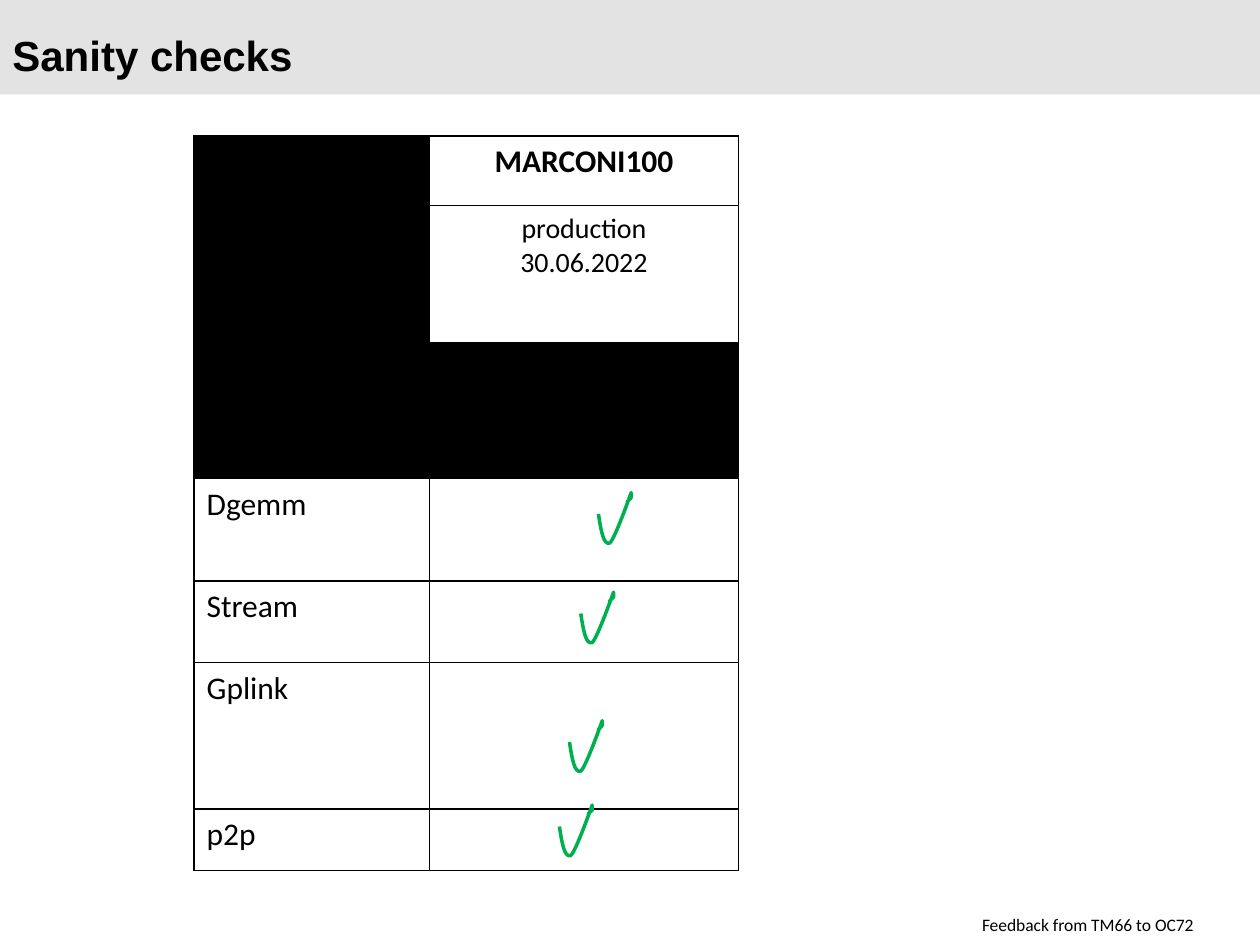
from lxml.etree import SubElement
from pptx import Presentation
from pptx.dml.color import RGBColor
from pptx.enum.shapes import MSO_SHAPE
from pptx.enum.text import MSO_ANCHOR, PP_ALIGN
from pptx.oxml import parse_xml
from pptx.oxml.ns import nsdecls, qn
from pptx.util import Inches, Pt

BLACK = RGBColor(0x00, 0x00, 0x00)
BAND_GRAY = RGBColor(0xE3, 0xE3, 0xE3)
CHECK_GREEN = RGBColor(0x00, 0xB0, 0x50)

COLUMN_WIDTHS = [1.87, 2.45]
ROW_HEIGHTS = [0.55, 1.09, 1.08, 0.81, 0.65, 1.16, 0.49]
ROWS = [
    ("", "MARCONI100"),
    ("", "production\n30.06.2022"),
    ("", ""),
    ("Dgemm", ""),
    ("Stream", ""),
    ("Gplink", ""),
    ("p2p", ""),
]
BLACK_CELLS = {(0, 0), (1, 0), (2, 0), (2, 1)}

# Check mark: start point, then cubic curves, relative to its box
CHECK_START = (0, 0.17)
CHECK_CURVES = [
    ((0.02, 0.3), (0.04, 0.42), (0.09, 0.4)),
    ((0.13, 0.37), (0.26, 0), (0.26, 0)),
    ((0.26, 0.01), (0.26, 0.03), (0.26, 0.04)),
    ((0.25, 0.05), (0.24, 0.06), (0.23, 0.07)),
    ((0.23, 0.07), (0.23, 0.08), (0.23, 0.08)),
]
CHECK_POSITIONS = [(4.75, 3.91), (4.61, 4.7), (4.52, 5.72), (4.44, 6.39)]


def add_band(slide, left, top, width, height):
    band = slide.shapes.add_shape(
        MSO_SHAPE.RECTANGLE, Inches(left), Inches(top), Inches(width), Inches(height))
    band.shadow.inherit = False
    band.fill.solid()
    band.fill.fore_color.rgb = BAND_GRAY
    band.line.fill.background()


def style_paragraph(paragraph, font_name, size, bold=False, alignment=PP_ALIGN.LEFT):
    paragraph.alignment = alignment
    paragraph.font.name = font_name
    paragraph.font.size = Pt(size)
    paragraph.font.bold = bold
    paragraph.font.color.rgb = BLACK


def add_text(slide, left, top, width, height, text):
    box = slide.shapes.add_textbox(
        Inches(left), Inches(top), Inches(width), Inches(height))
    frame = box.text_frame
    frame.word_wrap = True
    frame.vertical_anchor = MSO_ANCHOR.MIDDLE
    frame.text = text
    return frame.paragraphs[0]


def set_borders(cell):
    properties = cell._tc.get_or_add_tcPr()
    for index, side in enumerate(("lnL", "lnR", "lnT", "lnB")):
        properties.insert(index, parse_xml(
            f'<a:{side} {nsdecls("a")} w="{Pt(1)}"><a:solidFill>'
            f'<a:srgbClr val="{BLACK}"/></a:solidFill></a:{side}>'))


def add_check_table(slide, left, top):
    table = slide.shapes.add_table(
        len(ROWS), len(COLUMN_WIDTHS), Inches(left), Inches(top),
        Inches(sum(COLUMN_WIDTHS)), Inches(sum(ROW_HEIGHTS))).table
    table.first_row = False
    table.horz_banding = False
    for column, width in zip(table.columns, COLUMN_WIDTHS):
        column.width = Inches(width)
    for row, height in zip(table.rows, ROW_HEIGHTS):
        row.height = Inches(height)

    for row_index, texts in enumerate(ROWS):
        for column_index, text in enumerate(texts):
            cell = table.cell(row_index, column_index)
            cell.text = text
            if (row_index, column_index) in BLACK_CELLS:
                cell.fill.solid()
                cell.fill.fore_color.rgb = BLACK
            else:
                cell.fill.background()
            set_borders(cell)
            for paragraph in cell.text_frame.paragraphs:
                style_paragraph(
                    paragraph, "Calibri", 16 if row_index == 1 else 18,
                    bold=row_index == 0,
                    alignment=PP_ALIGN.CENTER if column_index else PP_ALIGN.LEFT)
    table.cell(0, 0).merge(table.cell(1, 0))


def bend_segments(shape, curves):
    """Turn each straight segment of the outline into a cubic curve."""
    segments = list(shape._element.iter(qn("a:lnTo")))
    for segment, curve in zip(segments, curves):
        bend = parse_xml(f'<a:cubicBezTo {nsdecls("a")}/>')
        for x, y in curve:
            SubElement(bend, qn("a:pt"), x=str(Inches(x)), y=str(Inches(y)))
        segment.getparent().replace(segment, bend)


def add_check_mark(slide, left, top):
    points = [CHECK_START] + [curve[-1] for curve in CHECK_CURVES]
    corners = [(Inches(left) + Inches(x), Inches(top) + Inches(y)) for x, y in points]
    builder = slide.shapes.build_freeform(*corners[0])
    builder.add_line_segments(corners[1:], close=False)
    check = builder.convert_to_shape()
    bend_segments(check, CHECK_CURVES)
    check.shadow.inherit = False
    check.fill.background()
    check.line.color.rgb = CHECK_GREEN
    check.line.width = Pt(2)


def main():
    presentation = Presentation()
    presentation.slide_width = Inches(10)
    presentation.slide_height = Inches(7.5)
    slide = presentation.slides.add_slide(presentation.slide_layouts[6])

    # Header band
    add_band(slide, 0, 0, 10, 0.75)

    # Results table
    add_check_table(slide, 1.54, 1.08)

    # Title
    title = add_text(slide, 0, -0.02, 9.88, 0.86, "Sanity checks")
    title.line_spacing = Pt(32)
    style_paragraph(title, "Arial", 24, bold=True)

    # Footer
    footer = add_text(slide, 4.65, 7.19, 4.92, 0.29, "Feedback from TM66 to OC72")
    style_paragraph(footer, "Calibri", 10, alignment=PP_ALIGN.RIGHT)

    # Check marks
    for left, top in CHECK_POSITIONS:
        add_check_mark(slide, left, top)

    presentation.save("out.pptx")


if __name__ == "__main__":
    main()
